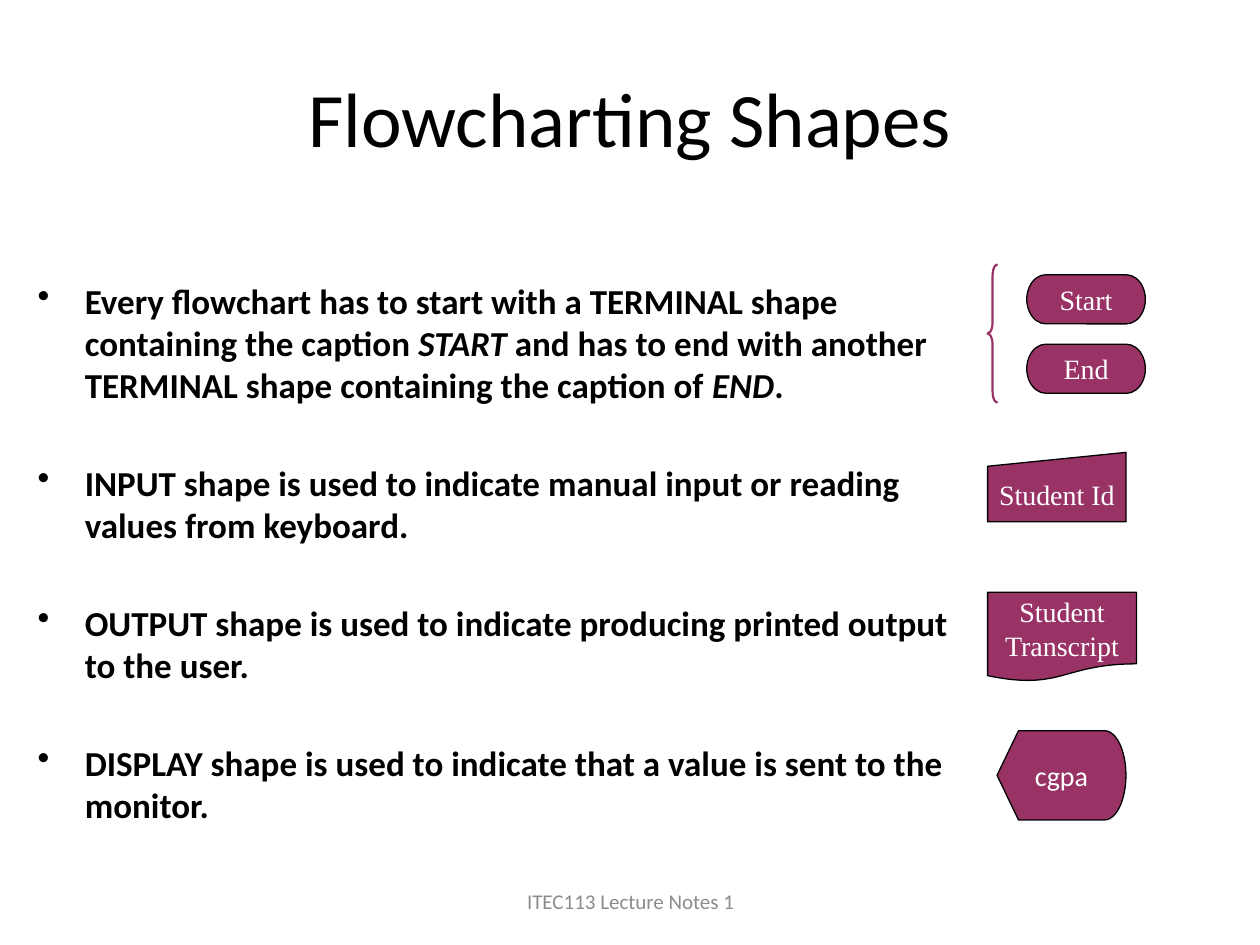
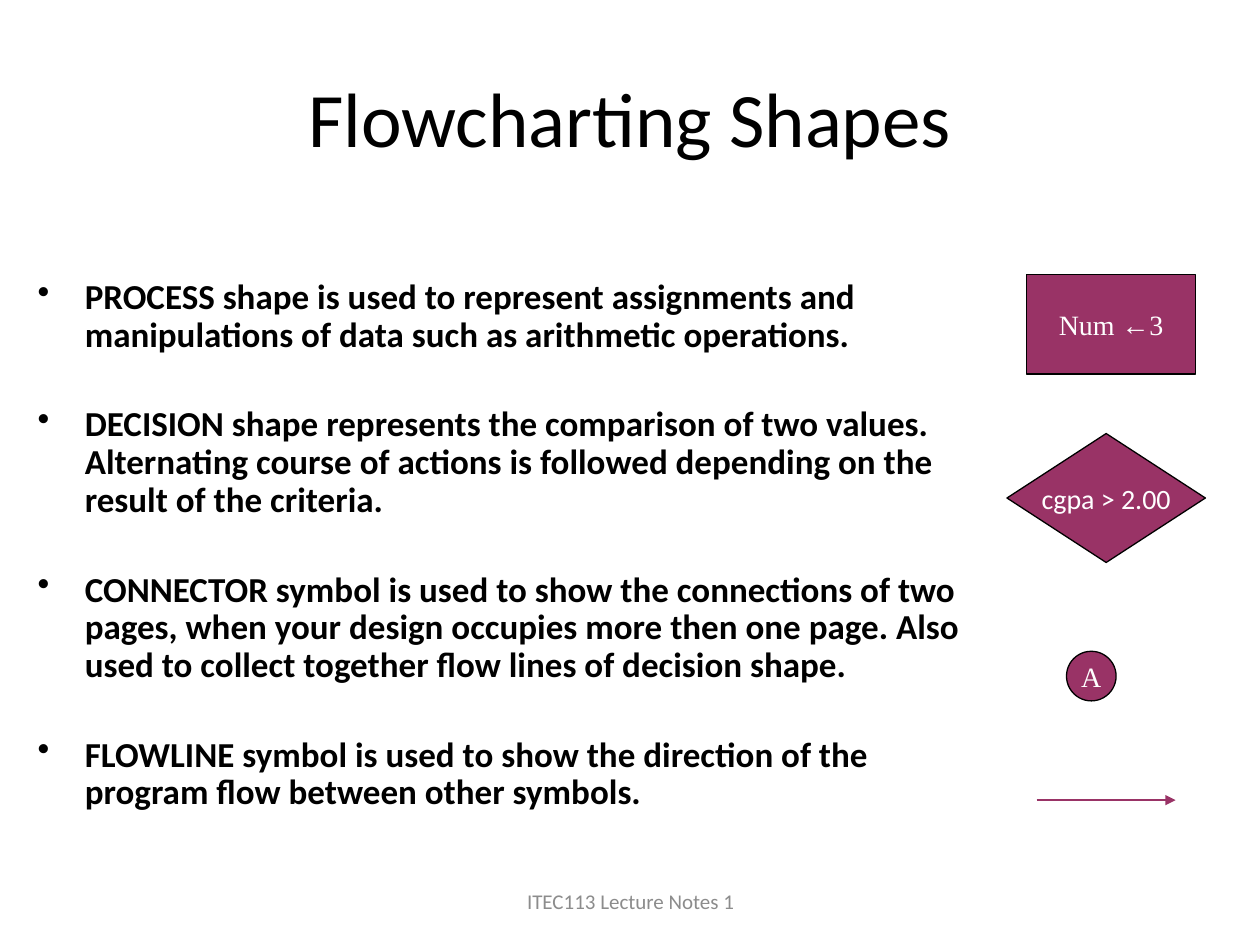
import pptx
import pptx.dml.color
import pptx.enum.shapes
import pptx.enum.text
import pptx.oxml.ns
import pptx.util
from lxml import etree
from pptx.util import Cm

COLORS = {
    "ink": "000000",
    "plum": "993366",
    "label": "FFFFFF",
    "footer": "8C8C8C",
}
SANS = "Calibri"
SERIF = "Times New Roman"
SHAPES = pptx.enum.shapes.MSO_SHAPE
CENTER = pptx.enum.text.PP_ALIGN.CENTER
MIDDLE = pptx.enum.text.MSO_ANCHOR.MIDDLE
TOP = pptx.enum.text.MSO_ANCHOR.TOP

SYMBOL_LEFT = 19.91
TERMINAL_LEFT = 20.7
FIRST_ROW = 5.54


def color(name):
    return pptx.dml.color.RGBColor.from_string(COLORS[name])


def add_element(parent, tag, **attributes):
    return etree.SubElement(parent, pptx.oxml.ns.qn(tag), attributes)


class FlowchartDeck:
    def __init__(self):
        self.deck = pptx.Presentation()
        self.deck.slide_width = Cm(25.4)
        self.deck.slide_height = Cm(19.05)
        self.page = None

    def start_page(self):
        self.page = self.deck.slides.add_slide(self.deck.slide_layouts[6])
        self.caption("Flowcharting Shapes", (1.27, 0.76, 22.86, 3.18), 44, "ink")
        self.caption("ITEC113 Lecture Notes 1", (8.69, 17.65, 8.05, 1.02), 12, "footer")

    def format_runs(self, paragraph, size, color_name, font=SANS, bold=False):
        for span in paragraph.runs:
            span.font.name = font
            span.font.size = pptx.util.Pt(size)
            span.font.bold = bold
            span.font.color.rgb = color(color_name)

    def text_box(self, place, anchor):
        box = self.page.shapes.add_textbox(*map(Cm, place))
        box.text_frame.word_wrap = True
        box.text_frame.vertical_anchor = anchor
        return box

    def caption(self, text, place, size, color_name):
        box = self.text_box(place, MIDDLE)
        box.text_frame.text = text
        para = box.text_frame.paragraphs[0]
        para.alignment = CENTER
        self.format_runs(para, size, color_name)

    def bullets(self, items, gap, line_spacing=1.0):
        frame = self.text_box((0.51, 5.51, 19.41, 11.43), TOP).text_frame
        for index, item in enumerate(items):
            para = frame.add_paragraph() if index else frame.paragraphs[0]
            para.line_spacing = line_spacing
            para.space_before = pptx.util.Pt(gap if index else 0)
            properties = para._p.get_or_add_pPr()
            properties.set("marL", str(Cm(0.95)))
            properties.set("indent", str(Cm(-0.95)))
            add_element(properties, "a:buChar", char="•")
            for position, part in enumerate(item.split("*")):
                span = para.add_run()
                span.text = part
                span.font.italic = position % 2 == 1
            self.format_runs(para, 20, "ink", bold=True)

    def symbol(self, kind, place, text, font=SERIF, wrap=False):
        shape = self.page.shapes.add_shape(kind, *map(Cm, place))
        shape.shadow.inherit = False
        shape.fill.solid()
        shape.fill.fore_color.rgb = color("plum")
        shape.line.color.rgb = color("ink")
        shape.line.width = pptx.util.Pt(0.75)
        frame = shape.text_frame
        frame.text = text
        frame.word_wrap = wrap
        frame.vertical_anchor = MIDDLE
        para = frame.paragraphs[0]
        para.alignment = CENTER
        self.format_runs(para, 16, "label", font)

    def brace(self, place):
        shape = self.page.shapes.add_shape(SHAPES.LEFT_BRACE, *map(Cm, place))
        shape.shadow.inherit = False
        shape.adjustments[0] = 1.15
        shape.adjustments[1] = 0.5
        shape.fill.background()
        shape.line.color.rgb = color("plum")
        shape.line.width = pptx.util.Pt(1.25)

    def arrow(self, start, end, height):
        line = self.page.shapes.add_connector(
            pptx.enum.shapes.MSO_CONNECTOR.STRAIGHT,
            Cm(start), Cm(height), Cm(end), Cm(height))
        line.line.color.rgb = color("plum")
        line.line.width = pptx.util.Pt(1.5)
        add_element(line.line._get_or_add_ln(), "a:tailEnd", type="triangle")
        add_element(line._element.spPr, "a:effectLst")


def build_input_output(deck):
    deck.start_page()
    deck.bullets([
        "Every flowchart has to start with a TERMINAL shape containing the caption "
        "*START* and has to end with another TERMINAL shape containing the caption "
        "of *END*.",
        "INPUT shape is used to indicate manual input or reading values from keyboard.",
        "OUTPUT shape is used to indicate producing printed output to the user.",
        "DISPLAY shape is used to indicate that a value is sent to the monitor.",
    ], gap=32)
    for row, text in enumerate(["Start", "End"]):
        place = (TERMINAL_LEFT, FIRST_ROW + row * 1.4, 2.39, 0.99)
        deck.symbol(SHAPES.FLOWCHART_TERMINATOR, place, text)
    deck.brace((SYMBOL_LEFT, 5.33, 0.2, 2.79))
    deck.symbol(SHAPES.FLOWCHART_MANUAL_INPUT,
                (SYMBOL_LEFT, 9.12, 2.79, 1.4), "Student Id")
    deck.symbol(SHAPES.FLOWCHART_DOCUMENT,
                (SYMBOL_LEFT, 11.94, 3, 1.8), "Student Transcript", wrap=True)
    deck.symbol(SHAPES.FLOWCHART_DISPLAY, (20.1, 14.73, 2.6, 1.8), "cgpa", SANS)


def build_process_flow(deck):
    deck.start_page()
    deck.bullets([
        "PROCESS shape is used to represent assignments and manipulations of data "
        "such as arithmetic operations.",
        "DECISION shape represents the comparison of two values. Alternating course "
        "of actions is followed depending on the result of the criteria.",
        "CONNECTOR symbol is used to show the connections of two pages, when your "
        "design occupies more then one page. Also used to collect together flow "
        "lines of decision shape.",
        "FLOWLINE symbol is used to show the direction of the program flow between "
        "other symbols.",
    ], gap=29.5, line_spacing=0.9)
    deck.symbol(SHAPES.FLOWCHART_DECISION, (20.3, 8.74, 4, 2.6), "cgpa > 2.00", SANS)
    deck.symbol(SHAPES.FLOWCHART_CONNECTOR, (21.5, 13.13, 1, 1), "A")
    deck.symbol(SHAPES.FLOWCHART_PROCESS, (TERMINAL_LEFT, FIRST_ROW, 3.4, 2), "Num ←3")
    deck.arrow(20.9, 23.7, 16.13)


def main():
    deck = FlowchartDeck()
    build_input_output(deck)
    build_process_flow(deck)
    deck.deck.save("out.pptx")


if __name__ == "__main__":
    main()
